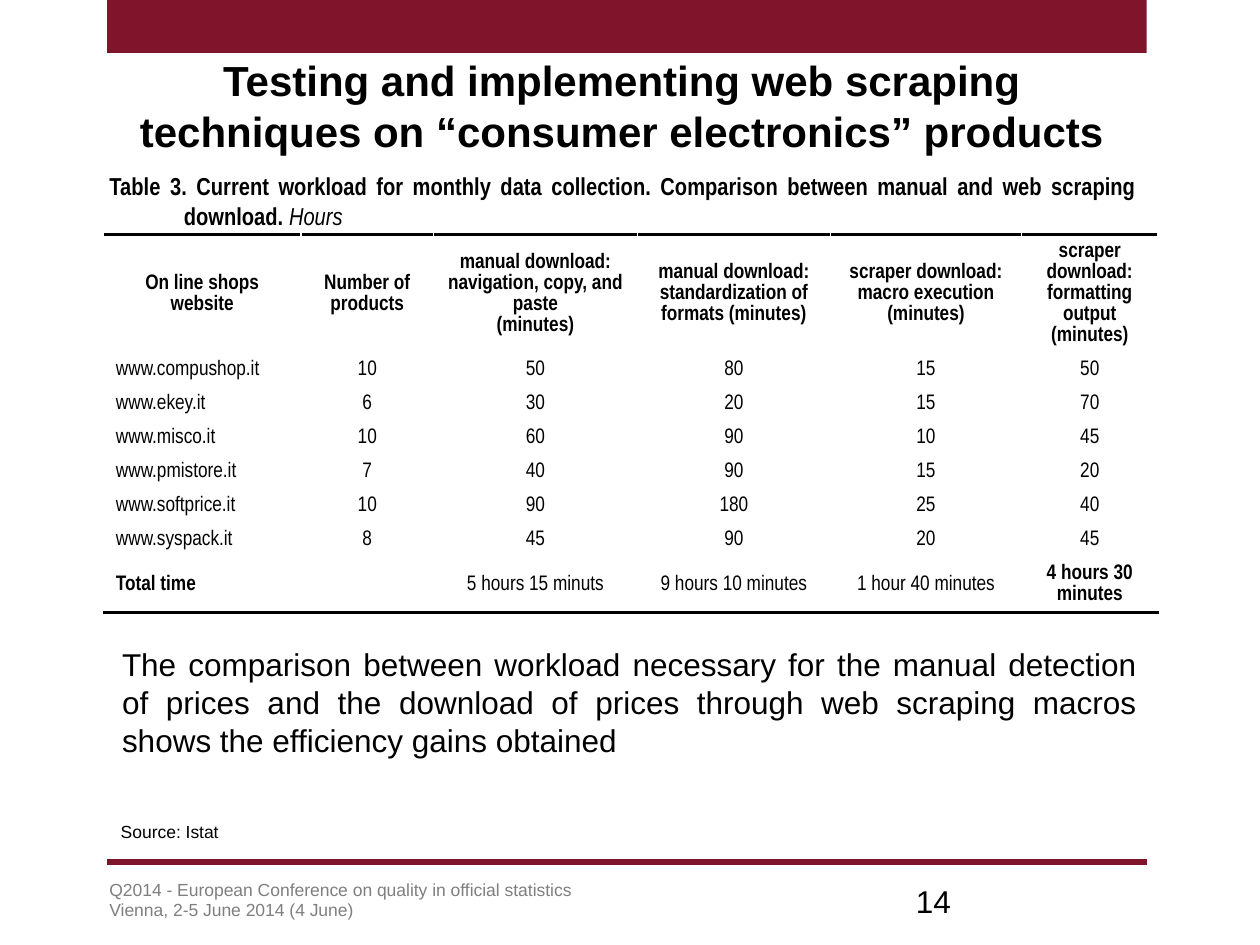
from lxml import etree
from pptx import Presentation
from pptx.dml.color import RGBColor
from pptx.enum import shapes, text
from pptx.oxml import ns
from pptx.util import Inches, Pt

RED = "7F142A"
BLACK = "000000"
GREY = "7F7F7F"
WHITE = "FFFFFF"
SANS = "Arial"
SLIM = "Arial Narrow"
LEFT = text.PP_ALIGN.LEFT
MID = text.PP_ALIGN.CENTER
FULL = text.PP_ALIGN.JUSTIFY

COLS = [1.57, 1.05, 1.62, 1.53, 1.52, 1.08]
ROWS = [0.94] + [0.27] * 6 + [0.44]
DATA = [
    ["On line shops website", "Number of products",
     "manual download: navigation, copy, and paste\n(minutes)",
     "manual download: standardization of formats (minutes)",
     "scraper download: macro execution (minutes)",
     "scraper download: formatting output (minutes)"],
    ["www.compushop.it", "10", "50", "80", "15", "50"],
    ["www.ekey.it", "6", "30", "20", "15", "70"],
    ["www.misco.it", "10", "60", "90", "10", "45"],
    ["www.pmistore.it", "7", "40", "90", "15", "20"],
    ["www.softprice.it", "10", "90", "180", "25", "40"],
    ["www.syspack.it", "8", "45", "90", "20", "45"],
    ["Total time", "", "5 hours 15 minuts", "9 hours 10 minutes",
     "1 hour 40 minutes", "4 hours 30 minutes"],
]


def paint(color, code):
    color.rgb = RGBColor.from_string(code)


def style(frame, size, face=SANS, code=BLACK, bold=False, align=LEFT):
    for para in frame.paragraphs:
        para.alignment = align
        for run in para.runs:
            run.font.name = face
            run.font.size = Pt(size)
            run.font.bold = bold
            paint(run.font.color, code)


def place(shape, left, top, width, height):
    shape.left, shape.top = Inches(left), Inches(top)
    shape.width, shape.height = Inches(width), Inches(height)


def add_text(slide, box, words, size, **look):
    frame = slide.shapes.add_textbox(*map(Inches, box)).text_frame
    frame.word_wrap = True
    frame.text = words
    style(frame, size, **look)
    return frame


def add_band(slide):
    box = map(Inches, (0.85, 0, 8.25, 0.42))
    band = slide.shapes.add_shape(shapes.MSO_SHAPE.RECTANGLE, *box)
    band.shadow.inherit = False
    band.fill.solid()
    paint(band.fill.fore_color, RED)
    band.line.fill.background()


def add_rule(slide):
    ends = map(Inches, (0.85, 6.84, 9.1, 6.84))
    rule = slide.shapes.add_connector(shapes.MSO_CONNECTOR.STRAIGHT, *ends)
    paint(rule.line.color, RED)
    rule.line.width = Pt(3.35)
    etree.SubElement(rule._element.spPr, ns.qn("a:effectLst"))


def add_title(slide):
    title = slide.shapes.title
    place(title, 0.75, 0.4, 8.37, 0.87)
    frame = title.text_frame
    frame.text = ("Testing and implementing web scraping techniques "
                  "on “consumer electronics” products")
    frame.word_wrap = True
    frame.auto_size = text.MSO_AUTO_SIZE.NONE
    frame.vertical_anchor = text.MSO_ANCHOR.MIDDLE
    style(frame, 24, bold=True, align=MID)


def add_edge(cell, side):
    props = cell._tc.get_or_add_tcPr()
    edge = etree.Element(ns.qn("a:ln" + side), w=str(Pt(2)))
    fill = etree.SubElement(edge, ns.qn("a:solidFill"))
    etree.SubElement(fill, ns.qn("a:srgbClr"), val=BLACK)
    props.insert(0, edge)


def fill_cell(cell, row, col):
    last = len(DATA) - 1
    frame = cell.text_frame
    frame.text = DATA[row][col]
    cell.vertical_anchor = text.MSO_ANCHOR.MIDDLE
    cell.fill.solid()
    paint(cell.fill.fore_color, WHITE)
    bold = row == 0 or (row == last and col in (0, len(COLS) - 1))
    align = FULL if col == 0 and row else MID
    style(frame, 12, face=SLIM, bold=bold, align=align)
    for para in frame.paragraphs:
        para.line_spacing = Pt(12)
    if row == 0:
        add_edge(cell, "T")
    if row == last:
        add_edge(cell, "B")


def add_grid(slide):
    box = map(Inches, (0.82, 1.86, sum(COLS), sum(ROWS)))
    table = slide.shapes.add_table(len(ROWS), len(COLS), *box).table
    table.first_row = table.horz_banding = False
    for col, width in enumerate(COLS):
        table.columns[col].width = Inches(width)
    for row, height in enumerate(ROWS):
        table.rows[row].height = Inches(height)
        for col in range(len(COLS)):
            fill_cell(table.cell(row, col), row, col)


def add_caption(slide):
    frame = add_text(
        slide, (0.77, 1.31, 8.35, 0.57),
        "Table 3. Current workload for monthly data collection. Comparison "
        "between manual and web scraping download. ",
        14, face=SLIM, bold=True, align=FULL)
    para = frame.paragraphs[0]
    props = para._p.get_or_add_pPr()
    props.set("marL", str(Inches(0.59)))
    props.set("indent", str(Inches(-0.59)))
    unit = para.add_run()
    unit.text = "Hours"
    unit.font.name = SLIM
    unit.font.size = Pt(14)
    unit.font.bold = False
    unit.font.italic = True
    paint(unit.font.color, BLACK)


def main():
    deck = Presentation()
    deck.slide_width, deck.slide_height = Inches(10), Inches(7.5)
    slide = deck.slides.add_slide(deck.slide_layouts[5])
    add_band(slide)
    add_rule(slide)
    foot = add_text(
        slide, (0.77, 6.97, 7.66, 0.39),
        "Q2014 - European Conference on quality in official statistics\n"
        "Vienna, 2-5 June 2014 (4 June)", 10, code=GREY)
    foot.paragraphs[0].line_spacing = 0.7
    add_text(slide, (7.17, 6.95, 2.33, 0.4), "14", 18)
    add_title(slide)
    add_text(slide, (0.86, 6.47, 1.51, 0.27), "Source: Istat", 10)
    add_grid(slide)
    add_caption(slide)
    add_text(
        slide, (0.87, 5.07, 8.25, 1.01),
        "The comparison between workload necessary for the manual detection "
        "of prices and the download of prices through web scraping macros "
        "shows the efficiency gains obtained", 18, align=FULL)
    deck.save("out.pptx")


if __name__ == "__main__":
    main()
